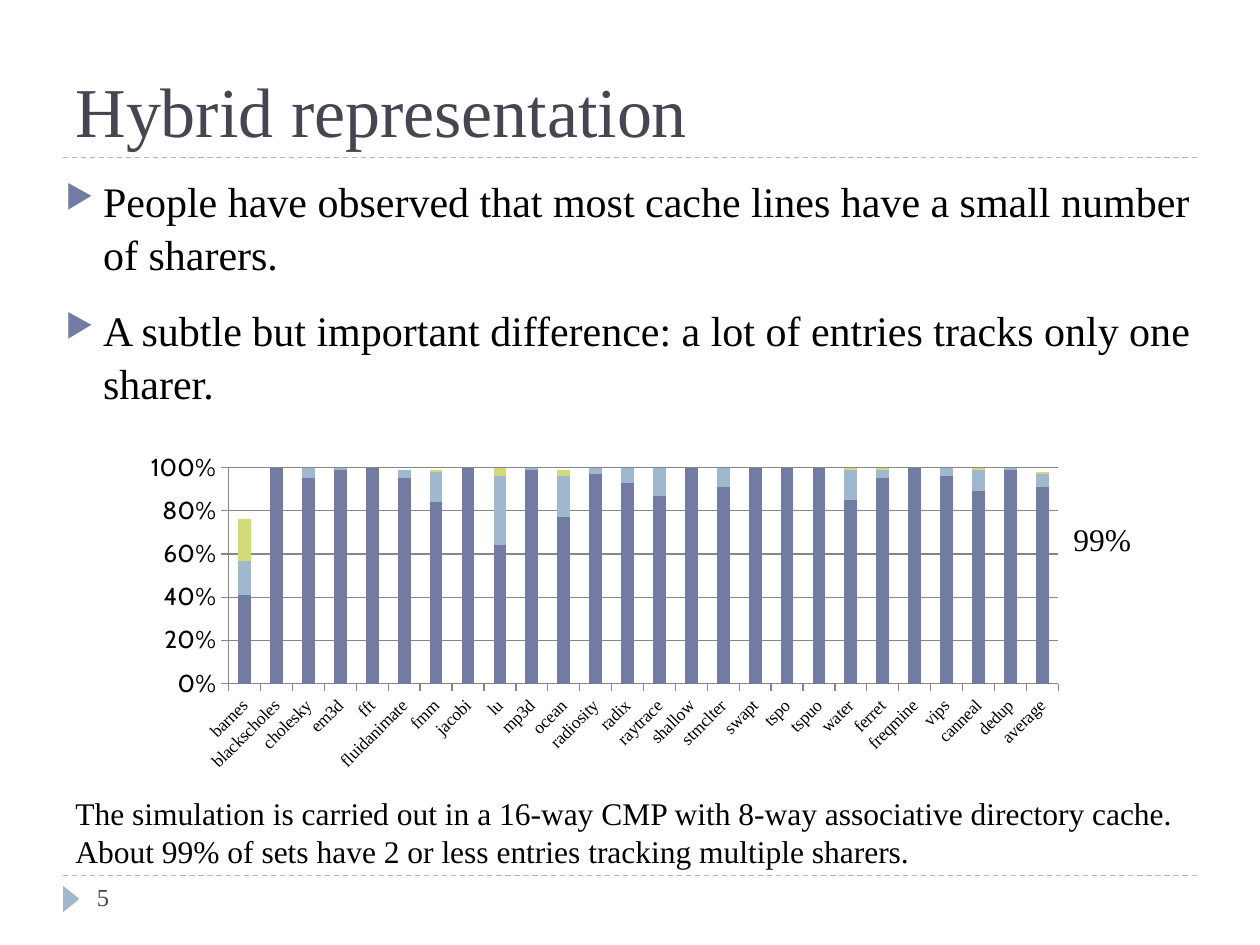
from lxml import etree
from pptx import Presentation
from pptx.chart.data import CategoryChartData
from pptx.dml.color import RGBColor
from pptx.enum.chart import XL_CHART_TYPE as ChartType, XL_TICK_MARK as Tick
from pptx.enum.dml import MSO_LINE
from pptx.enum.shapes import MSO_CONNECTOR, MSO_SHAPE
from pptx.enum.text import MSO_ANCHOR, PP_ALIGN
from pptx.oxml import parse_xml
from pptx.oxml.ns import nsdecls, qn
from pptx.util import Inches, Pt

COLORS = {
    "title": "464653",
    "text": "000000",
    "rule": "9FB8CD",
    "bullet": "727CA3",
    "axis": "868686",
    "0/8": "727CA3",
    "1/8": "9FB8CD",
    "2/8": "D2DA7A",
}
SERIF = "Times New Roman"
BULLETS = [
    "People have observed that most cache lines have a small number of sharers.",
    "A subtle but important difference: a lot of entries tracks only one sharer.",
]
CAPTION = ("The simulation is carried out in a 16-way CMP with 8-way associative directory cache. "
           "About 99% of sets have 2 or less entries tracking multiple sharers.")
BENCHMARKS = ("barnes blackscholes cholesky em3d fft fluidanimate fmm jacobi lu mp3d ocean "
              "radiosity radix raytrace shallow stmclter swapt tspo tspuo water ferret "
              "freqmine vips canneal dedup average").split()
SHARES = {
    "0/8": [0.41, 1, 0.95, 0.99, 1, 0.95, 0.84, 1, 0.64, 0.99, 0.77, 0.97, 0.93,
            0.87, 1, 0.91, 1, 1, 1, 0.85, 0.95, 1, 0.96, 0.89, 0.99, 0.91],
    "1/8": [0.16, 0, 0.05, 0.01, 0, 0.04, 0.14, 0, 0.32, 0.01, 0.19, 0.03, 0.07,
            0.13, 0, 0.09, 0, 0, 0, 0.14, 0.04, 0, 0.04, 0.1, 0.01, 0.06],
    "2/8": [0.19, 0, 0, 0, 0, 0, 0.01, 0, 0.04, 0, 0.03, 0, 0,
            0.01, 0, 0, 0, 0, 0, 0.01, 0.01, 0, 0, 0.01, 0, 0.01],
}
PLOT_BOX = {"x": 0.098, "y": 0.13, "w": 0.878, "h": 0.553}


def rgb(name):
    return RGBColor.from_string(COLORS[name])


def style_font(font, size, color="text", name=SERIF):
    font.name, font.size, font.bold = name, Pt(size), False
    font.color.rgb = rgb(color)


def add_text(slide, box, text, size, color="text", wrap=True):
    frame = slide.shapes.add_textbox(*map(Inches, box)).text_frame
    frame.word_wrap = wrap
    paragraph = frame.paragraphs[0]
    paragraph.text = text
    style_font(paragraph.font, size, color)
    return frame


def add_rule(slide, left, top, width):
    rule = slide.shapes.add_connector(MSO_CONNECTOR.STRAIGHT, Inches(left), Inches(top),
                                      Inches(left + width), Inches(top))
    rule.line.color.rgb = rgb("rule")
    rule.line.width = Pt(0.75)
    rule.line.dash_style = MSO_LINE.DASH
    etree.SubElement(rule._element.spPr, qn("a:effectLst"))


def add_title(slide, left, top, width, height):
    title = slide.shapes.title
    title.left, title.top, title.width, title.height = map(Inches, (left, top, width, height))
    title.text_frame.vertical_anchor = MSO_ANCHOR.BOTTOM
    paragraph = title.text_frame.paragraphs[0]
    paragraph.text = "Hybrid representation"
    paragraph.alignment = PP_ALIGN.LEFT
    style_font(paragraph.font, 40, "title")
    add_rule(slide, left, top + height, width)


def add_bullets(slide, box):
    frame = add_text(slide, box, BULLETS[0], 24)
    for text in BULLETS[1:]:
        paragraph = frame.add_paragraph()
        paragraph.text = text
        style_font(paragraph.font, 24)
    for index, paragraph in enumerate(frame.paragraphs):
        paragraph.line_spacing = 1.04
        paragraph.space_before = Pt(14 if index else 3)
        properties = paragraph._p.get_or_add_pPr()
        properties.set("marL", str(Inches(0.3)))
        properties.set("indent", str(-Inches(0.3)))
        bullet_color = etree.Element(qn("a:buClr"))
        etree.SubElement(bullet_color, qn("a:srgbClr"), val=COLORS["bullet"])
        bullet_parts = [
            bullet_color,
            etree.Element(qn("a:buSzPct"), val="76000"),
            etree.Element(qn("a:buChar"), char="▶"),
        ]
        defaults = properties.find(qn("a:defRPr"))
        for part in bullet_parts:
            defaults.addprevious(part)


def set_plot_box(chart):
    """Fix the inner plot area as fractions of the chart."""
    plot_area = chart._chartSpace.chart.plotArea
    for layout in plot_area.findall(qn("c:layout")):
        plot_area.remove(layout)
    sizes = "".join(f'<c:{key} val="{value}"/>' for key, value in PLOT_BOX.items())
    plot_area.insert(0, parse_xml(
        f'<c:layout {nsdecls("c")}><c:manualLayout><c:layoutTarget val="inner"/>'
        f'<c:xMode val="edge"/><c:yMode val="edge"/>{sizes}</c:manualLayout></c:layout>'))


def add_sharer_chart(slide, box):
    data = CategoryChartData(number_format="0%")
    data.categories = BENCHMARKS
    for name, shares in SHARES.items():
        data.add_series(name, shares)
    chart = slide.shapes.add_chart(ChartType.COLUMN_STACKED, *map(Inches, box), data).chart
    chart.has_title = chart.has_legend = False
    style_font(chart.font, 10, name="Cabin")
    set_plot_box(chart)

    plot = chart.plots[0]
    plot.gap_width, plot.overlap, plot.vary_by_categories = 150, 100, False
    for series in plot.series:
        series.format.fill.solid()
        series.format.fill.fore_color.rgb = rgb(series.name)

    benchmarks, share = chart.category_axis, chart.value_axis
    style_font(benchmarks.tick_labels.font, 10)
    benchmarks._element.find(qn("c:txPr")).find(qn("a:bodyPr")).set("rot", "-2700000")
    style_font(share.tick_labels.font, 14, name="Cabin")
    share.tick_labels.number_format = "0%"
    share.tick_labels.number_format_is_linked = False
    share.minimum_scale, share.maximum_scale, share.major_unit = 0, 1, 0.2
    share.has_major_gridlines = True
    for axis in (benchmarks, share):
        axis.major_tick_mark = Tick.OUTSIDE
        axis.format.line.color.rgb = rgb("axis")
    share.major_gridlines.format.line.color.rgb = rgb("axis")


def add_footer(slide, left, top, width):
    add_rule(slide, left, top, width)
    marker = slide.shapes.add_shape(MSO_SHAPE.ISOSCELES_TRIANGLE, Inches(left - 0.04),
                                    Inches(top + 0.12), Inches(0.21), Inches(0.13))
    marker.rotation = 90
    marker.shadow.inherit = False
    marker.fill.solid()
    marker.fill.fore_color.rgb = rgb("rule")
    marker.line.fill.background()
    add_text(slide, (left + 0.17, top, 2.17, 0.4), "5", 14, "title")


def main():
    deck = Presentation()
    deck.slide_width, deck.slide_height = Inches(10), Inches(7.5)
    slide = deck.slides.add_slide(deck.slide_layouts[5])
    add_title(slide, 0.5, 0.17, 9, 1.08)
    add_bullets(slide, (0.42, 1.33, 9.25, 2))
    add_sharer_chart(slide, (1.08, 3.31, 7.5, 3.1))
    add_text(slide, (8.42, 4.08, 0.66, 0.4), "99%", 18, wrap=False)
    add_text(slide, (0.5, 6.25, 9, 0.71), CAPTION, 18)
    add_footer(slide, 0.5, 6.95, 9)
    deck.save("out.pptx")


if __name__ == "__main__":
    main()
